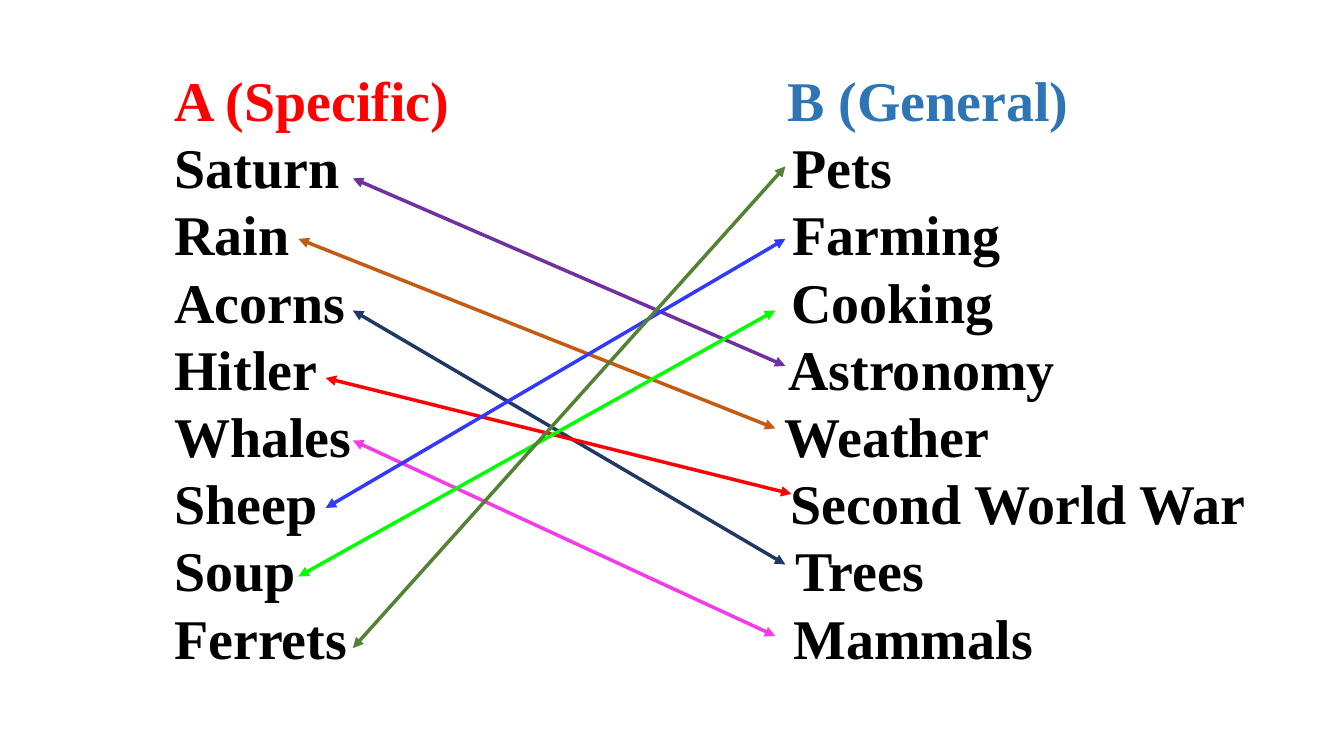
from pptx import Presentation
from pptx.dml.color import RGBColor
from pptx.enum.shapes import MSO_CONNECTOR
from pptx.enum.text import MSO_ANCHOR
from pptx.oxml.ns import qn
from pptx.util import Inches, Pt
from lxml import etree

STRAIGHT = MSO_CONNECTOR.STRAIGHT
MIDDLE = MSO_ANCHOR.MIDDLE
FONT = "Times New Roman"

BLACK = RGBColor(0x00, 0x00, 0x00)
RED = RGBColor(0xFF, 0x00, 0x00)
BLUE = RGBColor(0x2E, 0x75, 0xB6)
PURPLE = RGBColor(0x70, 0x30, 0xA0)
ORANGE = RGBColor(0xC5, 0x5A, 0x11)
NAVY = RGBColor(0x20, 0x38, 0x64)
PINK = RGBColor(0xF5, 0x3B, 0xE8)
INDIGO = RGBColor(0x33, 0x38, 0xFD)
LIME = RGBColor(0x00, 0xFF, 0x00)
GREEN = RGBColor(0x54, 0x82, 0x35)

BOX = (1.48, 0.57, 11.54, 6.11)

# Column A, column B, and the tab stop of column B in inches
HEAD = ("A (Specific)", "B (General)", 6.08)
WORDS = [
    ("Saturn", "Pets", 6.13),
    ("Rain", "Farming", 6.13),
    ("Acorns", "Cooking", 6.12),
    ("Hitler", "Astronomy", 6.09),
    ("Whales", "Weather", 6.05),
    ("Sheep", "Second World War", 6.11),
    ("Soup", "Trees", 6.16),
    ("Ferrets", "Mammals", 6.14),
]

# Start x, y and end x, y in inches from the corner of the box
LINKS = [
    (2.02, 1.20, 6.31, 3.06, PURPLE),
    (1.48, 1.80, 6.21, 3.68, ORANGE),
    (2.02, 2.51, 6.31, 5.03, NAVY),
    (1.75, 3.18, 6.37, 4.33, RED),
    (2.02, 3.80, 6.21, 5.74, PINK),
    (1.75, 4.47, 6.31, 1.80, INDIGO),
    (1.48, 5.15, 6.21, 2.51, LIME),
    (2.02, 5.86, 6.31, 1.08, GREEN),
]


def add_run(para, text, color):
    run = para.add_run()
    run.text = text
    font = run.font
    font.name, font.size, font.bold = FONT, Pt(40), True
    font.color.rgb = color


def set_tab(para, stop):
    props = para._p.get_or_add_pPr()
    tabs = etree.SubElement(props, qn("a:tabLst"))
    etree.SubElement(tabs, qn("a:tab"), pos=str(Inches(stop)), algn="l")


def add_words(slide, box):
    """Set both columns as tabbed lines in one text box."""
    frame = slide.shapes.add_textbox(*map(Inches, box)).text_frame
    frame.word_wrap = True
    frame.vertical_anchor = MIDDLE
    frame.margin_left, frame.margin_right = Inches(0.25), Inches(0.1)
    frame.margin_top, frame.margin_bottom = Inches(0.05), 0
    for row, (left, right, stop) in enumerate([HEAD] + WORDS):
        para = frame.add_paragraph() if row else frame.paragraphs[0]
        para.line_spacing = Pt(48)
        set_tab(para, stop)
        colors = (BLACK, BLACK) if row else (RED, BLUE)
        add_run(para, left + "\t", colors[0])
        add_run(para, right, colors[1])


def add_links(slide, box):
    """Join the matching words with two-headed arrows."""
    x, y = box[:2]
    for x1, y1, x2, y2, color in LINKS:
        ends = (x + x1, y + y1, x + x2, y + y2)
        link = slide.shapes.add_connector(STRAIGHT, *map(Inches, ends))
        link.line.color.rgb = color
        link.line.width = Pt(2.5)
        for end in ("a:headEnd", "a:tailEnd"):
            etree.SubElement(link.line._get_or_add_ln(), qn(end), type="triangle")
        etree.SubElement(link._element.spPr, qn("a:effectLst"))


def main():
    deck = Presentation()
    deck.slide_width, deck.slide_height = Inches(13.33), Inches(7.5)
    slide = deck.slides.add_slide(deck.slide_layouts[6])
    add_words(slide, BOX)
    add_links(slide, BOX)
    deck.save("out.pptx")


if __name__ == "__main__":
    main()
